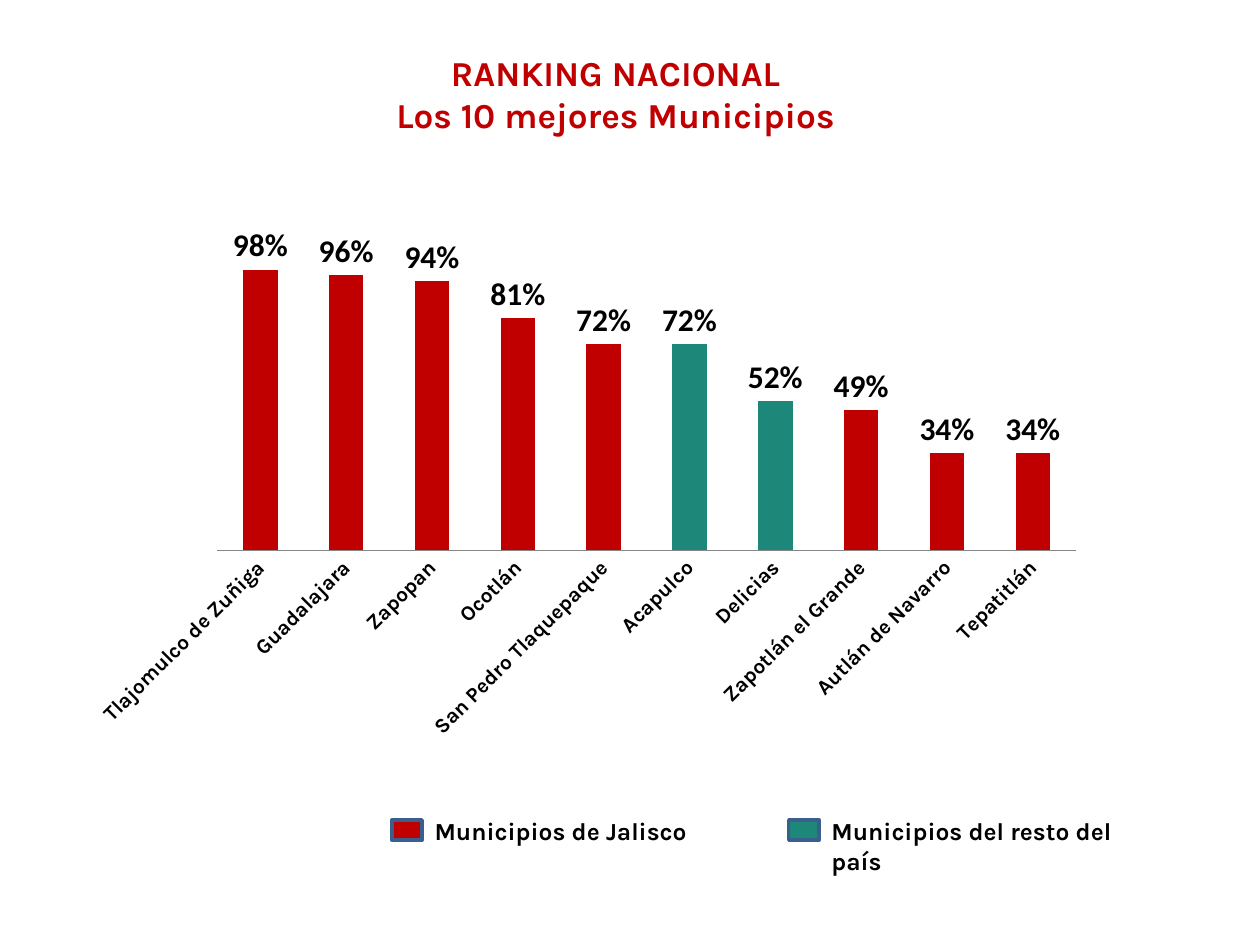
from dataclasses import dataclass

from lxml import etree
from pptx import Presentation
from pptx.chart.data import CategoryChartData
from pptx.dml.color import RGBColor
from pptx.enum.chart import XL_CHART_TYPE, XL_LABEL_POSITION, XL_TICK_MARK
from pptx.enum.shapes import MSO_SHAPE
from pptx.enum.text import MSO_ANCHOR, MSO_AUTO_SIZE, PP_ALIGN
from pptx.oxml.ns import qn
from pptx.util import Cm, Pt

COLUMNS = XL_CHART_TYPE.COLUMN_CLUSTERED
OUTSIDE = XL_LABEL_POSITION.OUTSIDE_END
NO_TICK = XL_TICK_MARK.NONE
RECT = MSO_SHAPE.RECTANGLE
CENTER, LEFT = PP_ALIGN.CENTER, PP_ALIGN.LEFT
TOP, MIDDLE = MSO_ANCHOR.TOP, MSO_ANCHOR.MIDDLE
NO_FIT = MSO_AUTO_SIZE.NONE
TITLE_ONLY = 5

RANKING = [
    ("Tlajomulco de Zuñiga", 0.98), ("Guadalajara", 0.96),
    ("Zapopan", 0.94), ("Ocotlán", 0.81),
    ("San Pedro Tlaquepaque", 0.72), ("Acapulco", 0.72),
    ("Delicias", 0.52), ("Zapotlán el Grande", 0.49),
    ("Autlán de Navarro", 0.34), ("Tepatitlán", 0.34),
]
OUTSIDE_JALISCO = {"Acapulco", "Delicias"}


@dataclass(frozen=True)
class Theme:
    jalisco: RGBColor = RGBColor(0xC0, 0x00, 0x00)
    others: RGBColor = RGBColor(0x1D, 0x87, 0x7A)
    text: RGBColor = RGBColor(0x00, 0x00, 0x00)
    swatch_line: RGBColor = RGBColor(0x3A, 0x5F, 0x8C)
    axis: RGBColor = RGBColor(0x86, 0x86, 0x86)
    font: str = "Karla"
    chart_font: str = "Calibri"
    title: int = 20
    value: int = 18
    legend: int = 14
    category: int = 12
    chart: int = 10


def set_font(font, name, size, color, bold=True):
    font.name, font.size, font.bold = name, Pt(size), bold
    font.color.rgb = color


def write_text(tf, text, *, font, size, color, align=LEFT, anchor=TOP):
    """Write each line of text as a paragraph of its own."""
    tf.word_wrap, tf.auto_size, tf.vertical_anchor = True, NO_FIT, anchor
    for i, line in enumerate(text.split("\n")):
        p = tf.add_paragraph() if i else tf.paragraphs[0]
        p.alignment = align
        r = p.add_run()
        r.text = line
        set_font(r.font, font, size, color)


def place_plot(chart, **fractions):
    """Fix the inner plot area, in fractions of the chart frame."""
    area = chart.element.find(".//" + qn("c:plotArea"))
    for old in area.findall(qn("c:layout")):
        area.remove(old)
    layout = etree.Element(qn("c:layout"))
    manual = etree.SubElement(layout, qn("c:manualLayout"))
    settings = {"layoutTarget": "inner", "xMode": "edge", "yMode": "edge", **fractions}
    for tag, value in settings.items():
        etree.SubElement(manual, qn("c:" + tag)).set("val", str(value))
    area.insert(0, layout)


class SlideBuilder:
    def __init__(self, slide, theme):
        self.slide, self.theme = slide, theme

    def title(self, text, x, y, w, h):
        s = self.slide.shapes.title
        s.left, s.top, s.width, s.height = Cm(x), Cm(y), Cm(w), Cm(h)
        write_text(s.text_frame, text, font=self.theme.font, size=self.theme.title,
                   color=self.theme.jalisco, align=CENTER, anchor=MIDDLE)

    def legend_entry(self, text, color, x, y, text_width):
        """Draw a colour swatch with its label to the right."""
        shapes, t = self.slide.shapes, self.theme
        swatch_width = 0.61
        s = shapes.add_shape(RECT, Cm(x), Cm(y + 0.2), Cm(swatch_width), Cm(0.41))
        s.shadow.inherit = False
        s.fill.solid()
        s.fill.fore_color.rgb = color
        s.line.color.rgb = t.swatch_line
        s.line.width = Pt(2)
        box = shapes.add_textbox(Cm(x + swatch_width), Cm(y), Cm(text_width), Cm(0.86))
        write_text(box.text_frame, text, font=t.font, size=t.legend, color=t.text)

    def ranking_chart(self, x, y, w, h):
        t = self.theme
        data = CategoryChartData(number_format="0%")
        data.categories = [name for name, _ in RANKING]
        data.add_series("Series 1", [value for _, value in RANKING])
        chart = self.slide.shapes.add_chart(
            COLUMNS, Cm(x), Cm(y), Cm(w), Cm(h), data).chart
        chart.has_legend = chart.has_title = False
        set_font(chart.font, t.chart_font, t.chart, t.text, bold=False)
        place_plot(chart, x=0.14, y=0.02, w=0.84, h=0.62)

        plot = chart.plots[0]
        plot.vary_by_categories = False
        plot.gap_width, plot.overlap = 150, -25
        for i, (name, _) in enumerate(RANKING):
            fill = plot.series[0].points[i].format.fill
            fill.solid()
            fill.fore_color.rgb = t.others if name in OUTSIDE_JALISCO else t.jalisco

        plot.has_data_labels = True
        labels = plot.data_labels
        labels.show_value, labels.position = True, OUTSIDE
        labels.number_format, labels.number_format_is_linked = "0%", False
        set_font(labels.font, t.chart_font, t.value, t.text)

        values = chart.value_axis
        values.minimum_scale, values.maximum_scale = 0, 1.2
        values.has_major_gridlines = values.visible = False

        names = chart.category_axis
        names.major_tick_mark = names.minor_tick_mark = NO_TICK
        names.format.line.color.rgb = t.axis
        names.format.line.width = Pt(0.75)
        set_font(names.tick_labels.font, t.font, t.category, t.text)
        body = names._element.find(qn("c:txPr")).find(qn("a:bodyPr"))
        body.set("rot", str(-45 * 60000))
        body.set("vert", "horz")


def main():
    prs = Presentation()
    prs.slide_width, prs.slide_height = Cm(25.4), Cm(19.05)
    theme = Theme()
    slide = SlideBuilder(prs.slides.add_slide(prs.slide_layouts[TITLE_ONLY]), theme)
    slide.title("RANKING NACIONAL\nLos 10 mejores Municipios", 5.51, 0.91, 13.8, 1.96)
    slide.legend_entry("Municipios de Jalisco", theme.jalisco, 7.9, 16.33, 5.6)
    slide.legend_entry("Municipios del resto del país", theme.others, 15.9, 16.33, 7.2)
    slide.ranking_chart(1.5, 3.94, 20.6, 11.18)
    prs.save("out.pptx")


if __name__ == "__main__":
    main()
